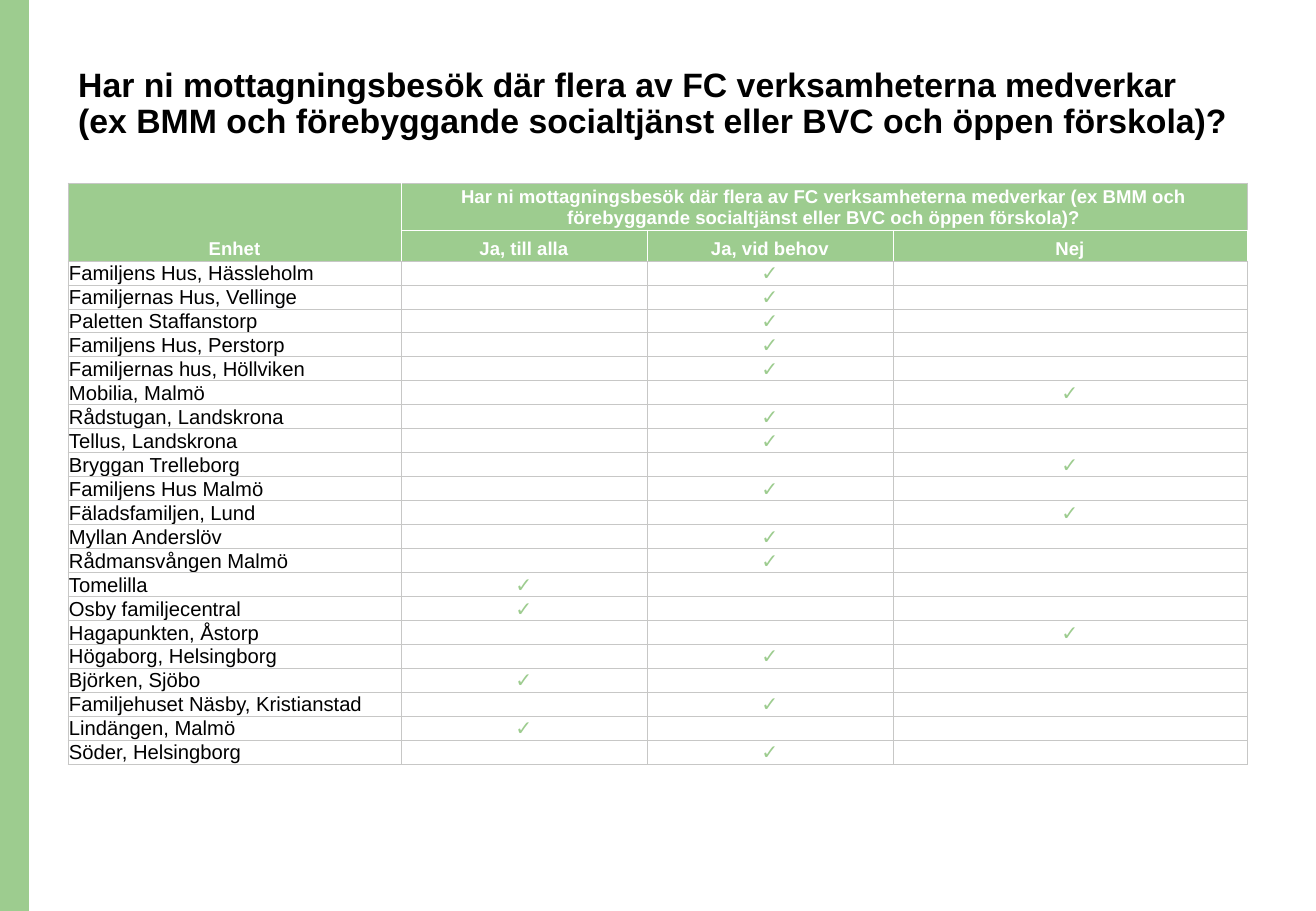
from dataclasses import dataclass

from lxml import etree
from pptx import Presentation
from pptx.dml.color import RGBColor
from pptx.enum.shapes import MSO_SHAPE
from pptx.enum.text import MSO_ANCHOR, MSO_AUTO_SIZE, PP_ALIGN
from pptx.oxml.ns import qn
from pptx.util import Pt

RECTANGLE = MSO_SHAPE.RECTANGLE
TOP, MIDDLE, BOTTOM = MSO_ANCHOR.TOP, MSO_ANCHOR.MIDDLE, MSO_ANCHOR.BOTTOM
LEFT, CENTER = PP_ALIGN.LEFT, PP_ALIGN.CENTER
NO_AUTOFIT = MSO_AUTO_SIZE.NONE

EMU_PER_PX = 7526
QUESTION = ("Har ni mottagningsbesök där flera av FC verksamheterna medverkar "
            "(ex BMM och förebyggande socialtjänst eller BVC och öppen förskola)?")
ANSWERS = ["Ja, till alla", "Ja, vid behov", "Nej"]
ALL, NEEDED, NO = 1, 2, 3  # answer columns
UNITS = [
    ("Familjens Hus, Hässleholm", NEEDED),
    ("Familjernas Hus, Vellinge", NEEDED),
    ("Paletten Staffanstorp", NEEDED),
    ("Familjens Hus, Perstorp", NEEDED),
    ("Familjernas hus, Höllviken", NEEDED),
    ("Mobilia, Malmö", NO),
    ("Rådstugan, Landskrona", NEEDED),
    ("Tellus, Landskrona", NEEDED),
    ("Bryggan Trelleborg", NO),
    ("Familjens Hus Malmö", NEEDED),
    ("Fäladsfamiljen, Lund", NO),
    ("Myllan Anderslöv", NEEDED),
    ("Rådmansvången Malmö", NEEDED),
    ("Tomelilla", ALL),
    ("Osby familjecentral", ALL),
    ("Hagapunkten, Åstorp", NO),
    ("Högaborg, Helsingborg", NEEDED),
    ("Björken, Sjöbo", ALL),
    ("Familjehuset Näsby, Kristianstad", NEEDED),
    ("Lindängen, Malmö", ALL),
    ("Söder, Helsingborg", NEEDED),
]


@dataclass(frozen=True)
class Theme:
    font: str = "Arial"
    green: str = "9DCC8F"
    white: str = "FFFFFF"
    black: str = "000000"
    grey: str = "C7C7C6"
    title_size: int = 20
    header_size: int = 11
    body_size: int = 12
    border: float = 0.5


def px(length):
    return length * EMU_PER_PX


class SlideBuilder:
    def __init__(self, slide, theme):
        self.slide = slide
        self.theme = theme

    def style(self, paragraph, size, color, bold=False, align=LEFT):
        paragraph.alignment = align
        font = paragraph.font
        font.name, font.size, font.bold = self.theme.font, Pt(size), bold
        font.color.rgb = RGBColor.from_string(color)

    def bar(self, left, top, width, height):
        bar = self.slide.shapes.add_shape(RECTANGLE, px(left), px(top), px(width), px(height))
        bar.shadow.inherit = False
        bar.fill.solid()
        bar.fill.fore_color.rgb = RGBColor.from_string(self.theme.green)
        bar.line.fill.background()

    def title(self, text, left, top, width, height):
        title = self.slide.shapes.title
        title.left, title.top, title.width, title.height = map(px, (left, top, width, height))
        frame = title.text_frame
        frame.text = text
        frame.word_wrap = True
        frame.auto_size = NO_AUTOFIT
        frame.vertical_anchor = TOP
        heading = frame.paragraphs[0]
        heading.line_spacing = 0.9
        self.style(heading, self.theme.title_size, self.theme.black, bold=True)

    def table(self, left, top, columns, rows):
        table = self.slide.shapes.add_table(
            len(rows), len(columns), px(left), px(top), px(sum(columns)), px(sum(rows))).table
        table.first_row = table.horz_banding = False
        for column, width in zip(table.columns, columns):
            column.width = px(width)
        for row, height in zip(table.rows, rows):
            row.height = px(height)
        return table

    def cell(self, cell, text, fill, borders, insets, anchor, size, color, bold, align):
        cell.margin_left, cell.margin_top, cell.margin_right, cell.margin_bottom = map(px, insets)
        cell.vertical_anchor = anchor
        cell.text = text
        label = cell.text_frame.paragraphs[0]
        self.style(label, size, color, bold, align)
        if not text:  # an empty cell must not stretch its row
            label._p.get_or_add_endParaRPr().set("sz", str(size * 100))
        cell.fill.solid()
        cell.fill.fore_color.rgb = RGBColor.from_string(fill)
        properties = cell._tc.get_or_add_tcPr()
        for index, (side, border) in enumerate(zip("LRTB", borders)):
            line = etree.Element(qn(f"a:ln{side}"), w=str(Pt(self.theme.border)))
            solid = etree.SubElement(line, qn("a:solidFill"))
            etree.SubElement(solid, qn("a:srgbClr"), val=border)
            properties.insert(index, line)

    def header_cell(self, table, row, column, text):
        theme = self.theme
        spans_answers = row == 0 and column > 0
        borders = [
            theme.grey if column == 0 else theme.white,
            theme.grey if spans_answers else theme.white,
            theme.grey if row == 0 else theme.white,
            theme.white if spans_answers else theme.grey,
        ]
        self.cell(table.cell(row, column), text, theme.green, borders, (2, 2, 2, 2),
                  BOTTOM, theme.header_size, theme.white, True, CENTER)

    def body_cell(self, table, row, column, text):
        theme = self.theme
        color, align = (theme.green, CENTER) if column else (theme.black, LEFT)
        self.cell(table.cell(row, column), text, theme.white, [theme.grey] * 4, (1, 1, 1, 0),
                  MIDDLE, theme.body_size, color, False, align)


def main():
    presentation = Presentation()
    presentation.slide_width, presentation.slide_height = px(1316), px(911)
    slide = presentation.slides.add_slide(presentation.slide_layouts[5])
    builder = SlideBuilder(slide, Theme())

    # Side bar and heading
    builder.bar(0, 0, 29, 911)
    builder.title(QUESTION, 66, 62, 1180, 120)

    # Table header: unit spans two rows, question spans the answers
    survey = builder.table(68, 183, [333, 246, 246, 354], [47, 31] + [24] * len(UNITS))
    headers = [["Enhet", QUESTION, "", ""], ["", *ANSWERS]]
    for row, labels in enumerate(headers):
        for column, label in enumerate(labels):
            builder.header_cell(survey, row, column, label)
    survey.cell(0, 0).merge(survey.cell(1, 0))
    survey.cell(0, 1).merge(survey.cell(0, 3))

    # One row per unit, ticked in its answer column
    for row, (unit, answer) in enumerate(UNITS, start=len(headers)):
        builder.body_cell(survey, row, 0, unit)
        for column in (ALL, NEEDED, NO):
            builder.body_cell(survey, row, column, "✓" if column == answer else "")

    presentation.save("out.pptx")


if __name__ == "__main__":
    main()
